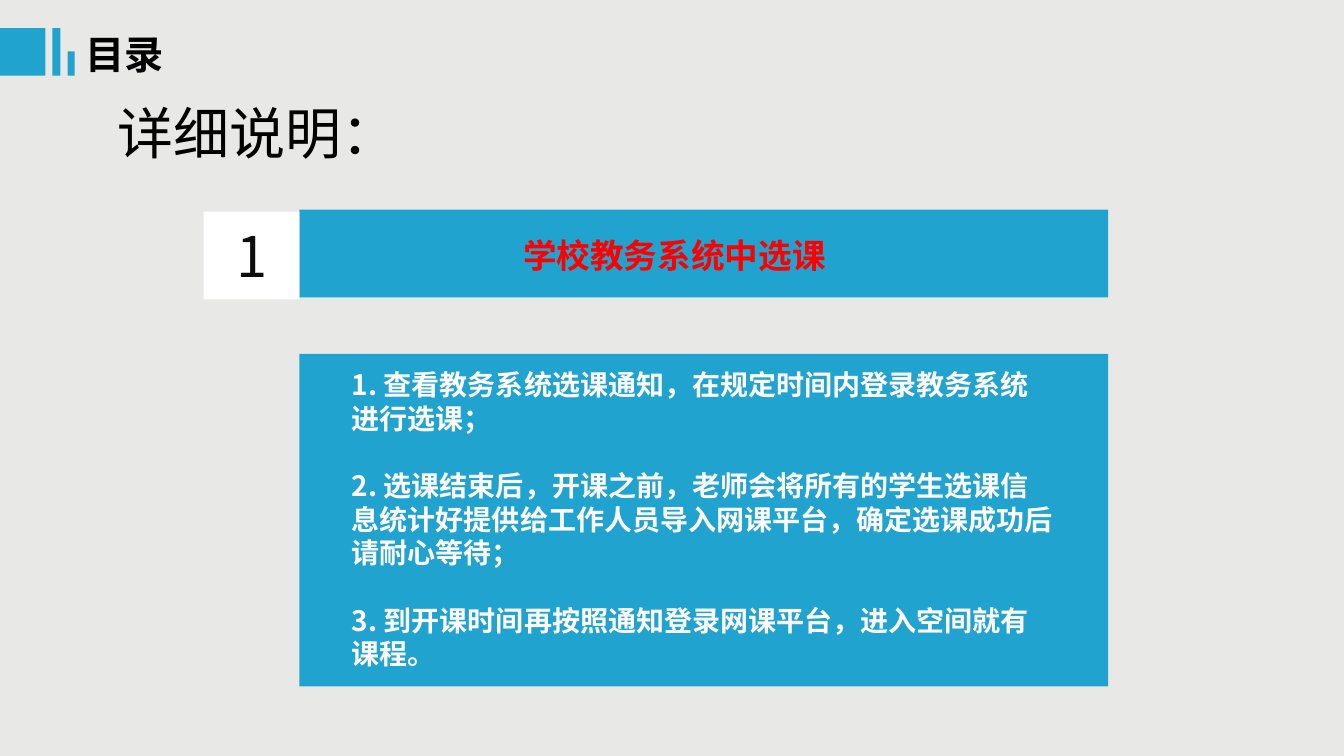
from lxml.etree import SubElement
from pptx import Presentation
from pptx.dml.color import RGBColor
from pptx.enum.shapes import MSO_SHAPE as Preset
from pptx.enum.text import MSO_ANCHOR as Anchor, PP_ALIGN as Align
from pptx.oxml.ns import qn
from pptx.util import Inches, Pt

BLUE = RGBColor(0x21, 0xA3, 0xD0)
GREY = RGBColor(0xE8, 0xE8, 0xE6)
WHITE = RGBColor(0xFF, 0xFF, 0xFF)
BLACK = RGBColor(0, 0, 0)
INK = RGBColor(0x0D, 0x0D, 0x0D)
RED = RGBColor(0xFF, 0, 0)
HAN = "Noto Sans CJK SC"
LATIN = "Calibri"
LINE = 1.2

STEPS = (
    "1. 查看教务系统选课通知，在规定时间内登录教务系统进行选课；",
    "2. 选课结束后，开课之前，老师会将所有的学生选课信息统计好提供给工作人员导入网课平台，确定选课成功后请耐心等待；",
    "3. 到开课时间再按照通知登录网课平台，进入空间就有课程。",
)


def block(slide, left, top, width, height, color=BLUE):
    rect = slide.shapes.add_shape(
        Preset.RECTANGLE, *map(Inches, (left, top, width, height)))
    rect.shadow.inherit = False
    rect.fill.solid()
    rect.fill.fore_color.rgb = color
    rect.line.fill.background()
    return rect


def write(frame, lines, size, color, bold=False, face=HAN, align=Align.LEFT):
    frame.word_wrap = True
    for index, line in enumerate(lines):
        paragraph = frame.add_paragraph() if index else frame.paragraphs[0]
        paragraph.alignment = align
        paragraph.line_spacing = Pt(size * LINE)
        if index:
            paragraph.space_before = Pt(size * LINE)
        run = paragraph.add_run()
        run.text = line
        run.font.size = Pt(size)
        run.font.bold = bold
        run.font.name = face
        run.font.color.rgb = color
        SubElement(run.font._element, qn("a:ea")).set("typeface", HAN)


def label(slide, left, top, width, height, lines, size, color, **style):
    box = slide.shapes.add_textbox(*map(Inches, (left, top, width, height)))
    write(box.text_frame, lines, size, color, **style)


def header(slide, left, top, height):
    block(slide, left, top, 0.45, height)
    block(slide, left + 0.52, top, 0.08, height)
    block(slide, left + 0.67, top + 0.23, 0.07, height - 0.23)
    label(slide, left + 0.75, top - 0.03, 1.27, 0.57, ["目录"], 28, BLACK, bold=True)


def topic(slide, left, top, width, height):
    block(slide, left, top, width, height)
    number = block(slide, left - 0.95, top + 0.02, 0.95, height, WHITE)
    number.text_frame.vertical_anchor = Anchor.MIDDLE
    write(number.text_frame, ["1"], 40, INK, align=Align.CENTER)
    label(slide, left + 2.12, top + 0.2, 4.49, 0.5,
          ["学校教务系统中选课"], 24, RED, bold=True)


def instructions(slide, left, top, width, height):
    block(slide, left, top, width, height)
    label(slide, left + 0.42, top + 0.09, width - 0.84, height - 0.17,
          STEPS, 20, WHITE, bold=True)


def main():
    deck = Presentation()
    deck.slide_width, deck.slide_height = Inches(13.33), Inches(7.5)
    slide = deck.slides.add_slide(deck.slide_layouts[6])
    slide.background.fill.solid()
    slide.background.fill.fore_color.rgb = GREY
    header(slide, 0, 0.28, 0.47)
    label(slide, 1.07, 0.93, 8.51, 0.77, ["详细说明："], 40, BLACK, face=LATIN)
    topic(slide, 2.97, 2.08, 8.02, 0.87)
    instructions(slide, 2.97, 3.51, 8.02, 3.3)
    deck.save("out.pptx")


if __name__ == "__main__":
    main()
